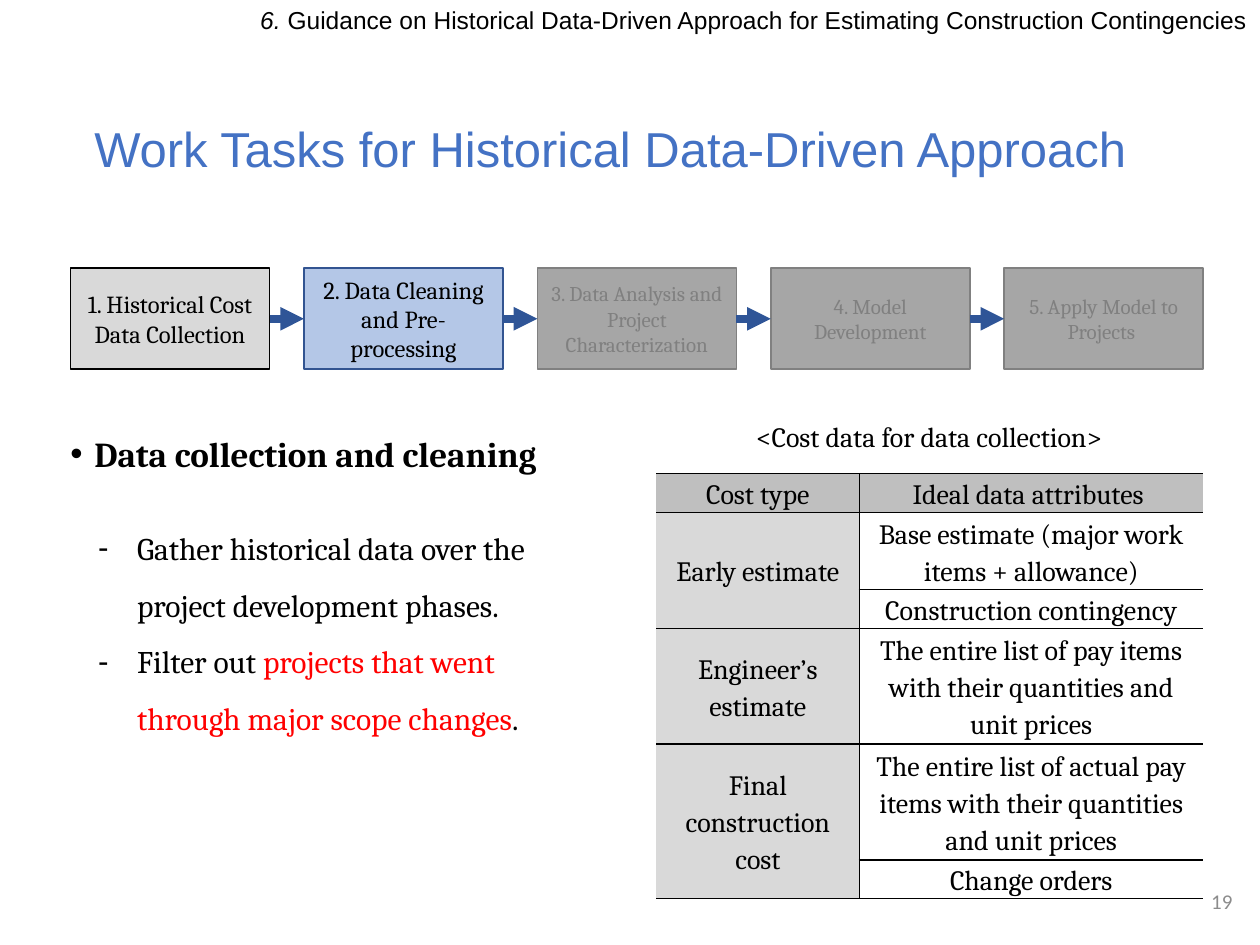
import pptx
import pptx.util
import pptx.dml.color
import pptx.enum.text
import pptx.enum.shapes
import pptx.oxml
import pptx.oxml.ns
import lxml.etree

Inches = pptx.util.Inches
Pt = pptx.util.Pt
qn = pptx.oxml.ns.qn
Align = pptx.enum.text.PP_ALIGN
Mid = pptx.enum.text.MSO_ANCHOR.MIDDLE
Grow = pptx.enum.text.MSO_AUTO_SIZE.SHAPE_TO_FIT_TEXT
Rect = pptx.enum.shapes.MSO_SHAPE.RECTANGLE


def ink(code):
    return pptx.dml.color.RGBColor.from_string(code)


def write(par, text, size=16, face="Cambria", color="000000", bold=False, slant=False,
          align=None, lines=None, gap=None, hang=None, mark=None):
    run = par.add_run()
    run.text = text
    run.font.size = Pt(size)
    run.font.name = face
    run.font.bold = bold
    run.font.italic = slant
    run.font.color.rgb = ink(color)
    if align is not None:
        par.alignment = align
    if lines:
        par.line_spacing = lines
    if gap:
        par.space_before = par.space_after = Pt(gap)
    if mark:
        props = par._p.get_or_add_pPr()
        props.set("marL", str(Inches(hang)))
        props.set("indent", str(-Inches(hang)))
        lxml.etree.SubElement(props, qn("a:buFont")).set("typeface", "Arial")
        lxml.etree.SubElement(props, qn("a:buChar")).set("char", mark)


deck = pptx.Presentation()
deck.slide_width = Inches(10)
deck.slide_height = Inches(7.5)
slide = deck.slides.add_slide(deck.slide_layouts[6])
shapes = slide.shapes

texts = {}
for name, spot in {
    "page": (7.63, 6.95, 2.25, 0.4),
    "title": (0.65, 0.48, 8.62, 1.45),
    "tasks": (0.68, 4, 3.96, 1.86),
    "header": (1.91, 0.02, 8.09, 0.4),
}.items():
    frame = shapes.add_textbox(*map(Inches, spot)).text_frame
    frame.word_wrap = True
    texts[name] = frame

texts["page"].vertical_anchor = texts["title"].vertical_anchor = Mid
write(texts["page"].paragraphs[0], "19", size=12, face="Calibri", color="8C8C8C", align=Align.RIGHT)
write(texts["title"].paragraphs[0], "Work Tasks for Historical Data-Driven Approach",
      size=28, face="Arial", color="4472C4", lines=0.9)

head = texts["header"].paragraphs[0]
head.space_before = Pt(10)
write(head, "6. ", size=14, face="Arial", slant=True, align=Align.RIGHT, lines=0.9)
write(head, "Guidance on Historical Data-Driven Approach for Estimating Construction Contingencies",
      size=14, face="Arial")

texts["tasks"].auto_size = Grow
first = texts["tasks"].paragraphs[0]
write(first, "Gather historical data over the project development phases.",
      size=18, lines=1.5, hang=0.31, mark="-")
second = texts["tasks"].add_paragraph()
write(second, "Filter out ", size=18, lines=1.5, hang=0.31, mark="-")
write(second, "projects that went through major scope changes", size=18, color="FF0000")
write(second, ".", size=18)

steps = [
    ("1. Historical Cost Data Collection", 14, "D9D9D9", "000000", "000000"),
    ("2. Data Cleaning and Pre-processing", 14, "B4C7E7", "325491", "000000"),
    ("3. Data Analysis and Project Characterization", 12, "A6A6A6", "808080", "808080"),
    ("4. Model Development", 12, "A6A6A6", "808080", "808080"),
    ("5. Apply Model to Projects ", 12, "A6A6A6", "808080", "808080"),
]
pitch = (7.97 - 0.56) / 4
boxes = []
for i, (text, size, fill, edge, color) in enumerate(steps):
    box = shapes.add_shape(Rect, Inches(0.56 + i * pitch), Inches(2.13), Inches(1.58), Inches(0.8))
    box.shadow.inherit = False
    box.fill.solid()
    box.fill.fore_color.rgb = ink(fill)
    box.line.color.rgb = ink(edge)
    box.line.width = Pt(1)
    box.text_frame.word_wrap = True
    box.text_frame.vertical_anchor = Mid
    write(box.text_frame.paragraphs[0], text, size=size, color=color, align=Align.CENTER)
    boxes.append(box)

for left, right in zip(boxes, boxes[1:]):
    arrow = shapes.add_connector(pptx.enum.shapes.MSO_CONNECTOR.STRAIGHT, 0, 0, 0, 0)
    arrow.begin_connect(left, 3)
    arrow.end_connect(right, 1)
    arrow.line.color.rgb = ink("2F5597")
    arrow.line.width = Pt(4.5)
    lxml.etree.SubElement(arrow.line._get_or_add_ln(), qn("a:tailEnd")).set("type", "triangle")
    lxml.etree.SubElement(arrow._element.spPr, qn("a:effectLst"))

rows = [
    ("Cost type", "Ideal data attributes ", 1),
    ("Early estimate", "Base estimate (major work items + allowance)", 2),
    ("", "Construction contingency", 1),
    ("Engineer’s estimate", "The entire list of pay items with their quantities and unit prices", 3),
    ("Final construction cost",
     "The entire list of actual pay items with their quantities and unit prices", 3),
    ("", "Change orders", 1),
]
table = shapes.add_table(6, 2, Inches(5.21), Inches(3.76), Inches(4.34), Inches(3.23)).table
table.first_row = table.horz_banding = False
table.columns[0].width = Inches(1.61)
table.columns[1].width = Inches(2.73)
for r, (kind, item, count) in enumerate(rows):
    table.rows[r].height = Inches(0.29 * count)
    for c, text in enumerate((kind, item)):
        cell = table.cell(r, c)
        cell.margin_left = cell.margin_right = Inches(0.07)
        cell.margin_top = cell.margin_bottom = 0
        cell.vertical_anchor = Mid
        props = cell._tc.get_or_add_tcPr()
        for side in "LRTB":
            edge = lxml.etree.SubElement(props, qn("a:ln" + side), w=str(Pt(1)))
            if side in "TB" or (side == "R") == (c == 0):
                paint = lxml.etree.SubElement(edge, qn("a:solidFill"))
                lxml.etree.SubElement(paint, qn("a:srgbClr")).set("val", "000000")
            else:
                lxml.etree.SubElement(edge, qn("a:noFill"))
        if r == 0 or c == 0:
            cell.fill.solid()
            cell.fill.fore_color.rgb = ink("D9D9D9" if r else "BFBFBF")
        else:
            cell.fill.background()
        if text:
            write(cell.text_frame.paragraphs[0], text, align=Align.CENTER, lines=1.15, gap=3)
for r in (1, 4):
    table.cell(r, 0).merge(table.cell(r + 1, 0))

labels = [
    ("Data collection and cleaning", (0.46, 3.38, 3.96, 0.44), "FFFFFF",
     dict(size=20, bold=True, align=Align.LEFT, hang=0.19, mark="•")),
    ("<Cost data for data collection>", (5.49, 3.28, 3.77, 0.37), None, dict(align=Align.CENTER)),
]
for text, spot, fill, style in labels:
    label = shapes.add_shape(Rect, *map(Inches, spot))
    label.shadow.inherit = False
    if fill:
        label.fill.solid()
        label.fill.fore_color.rgb = ink(fill)
    else:
        label.fill.background()
    label.line.color.rgb = ink("FFFFFF")
    label.line.width = Pt(0.75)
    label.text_frame.word_wrap = True
    label.text_frame.auto_size = Grow
    label.text_frame.vertical_anchor = pptx.enum.text.MSO_ANCHOR.TOP
    write(label.text_frame.paragraphs[0], text, **style)

deck.save("out.pptx")
